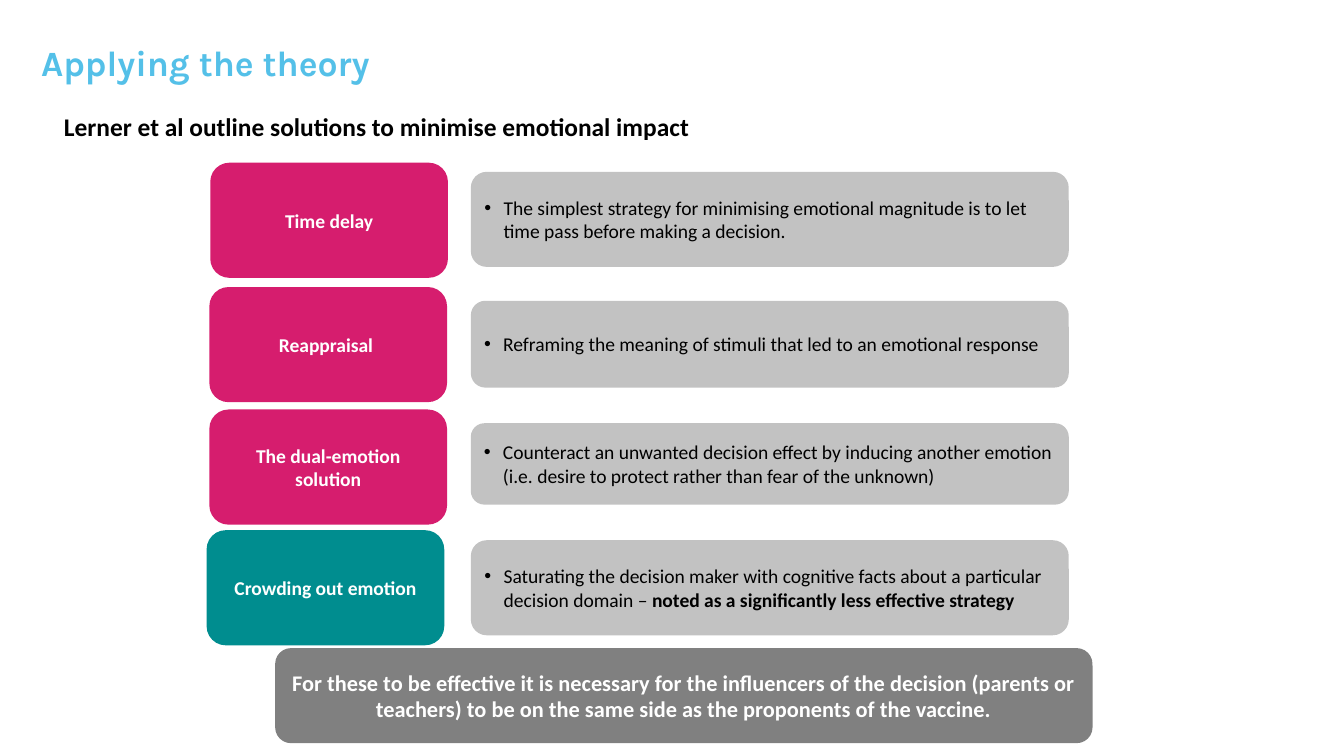
from lxml import etree
from pptx import Presentation
from pptx import util as u
from pptx.dml.color import RGBColor
from pptx.enum import shapes, text
from pptx.oxml.ns import qn

TITLE = "Applying the theory"
SUBTITLE = "Lerner et al outline solutions to minimise emotional impact"
PINK, TEAL, SILVER, GREY = "D61D6E", "008D8F", "C2C2C2", "808080"
BLACK, WHITE, SKY = "000000", "FFFFFF", "54C0E8"
STRATEGIES = [
    ("Time delay", PINK, (230, 178), (188, 104),
     ["The simplest strategy for minimising emotional magnitude is to let time pass before making a decision."]),
    ("Reappraisal ", PINK, (229, 314), (329, 95),
     ["Reframing the meaning of stimuli that led to an emotional response"]),
    ("The dual-emotion solution", PINK, (229, 448), (463, 89),
     ["Counteract an unwanted decision effect by inducing another emotion "
      "(i.e. desire to protect rather than fear of the unknown)"]),
    ("Crowding out emotion", TEAL, (226, 580), (591, 104),
     ["Saturating the decision maker with cognitive facts about a particular decision domain – ",
      "noted as a significantly less effective strategy"]),
]
CONCLUSION = ("For these to be effective it is necessary for the influencers of the decision "
              "(parents or teachers) to be on the same side as the proponents of the vaccine.")
LABEL_SIZE = (260, 126)
PANEL_LEFT, PANEL_WIDTH = 515, 654
BULLET_INDENT = 21


def px(value):
    return u.Emu(value * 9144)


def colour(value):
    return RGBColor.from_string(value)


def write(box, runs, size, ink, font="Calibri", bold=False, last_bold=False,
          align=text.PP_ALIGN.LEFT, anchor=text.MSO_ANCHOR.MIDDLE, side=10, bullet=False):
    frame = box.text_frame
    frame.word_wrap = True
    frame.auto_size = text.MSO_AUTO_SIZE.NONE
    frame.vertical_anchor = anchor
    frame.margin_left = frame.margin_right = px(side)
    frame.margin_top = frame.margin_bottom = px(5)
    para = frame.paragraphs[0]
    para.alignment = align
    if bullet:
        properties = para._p.get_or_add_pPr()
        properties.set("marL", str(px(BULLET_INDENT)))
        properties.set("indent", str(-px(BULLET_INDENT)))
        etree.SubElement(properties, qn("a:buFont"), typeface="Arial")
        etree.SubElement(properties, qn("a:buChar"), char="•")
    for index, content in enumerate(runs):
        span = para.add_run()
        span.text = content
        span.font.name = font
        span.font.size = u.Pt(size)
        span.font.bold = bold or (last_bold and index == len(runs) - 1)
        span.font.color.rgb = colour(ink)


def add_card(page, left, top, width, height, fill, runs, size, ink, **style):
    card = page.shapes.add_shape(shapes.MSO_SHAPE.ROUNDED_RECTANGLE,
                                 px(left), px(top), px(width), px(height))
    card.shadow.inherit = False
    card.fill.solid()
    card.fill.fore_color.rgb = colour(fill)
    card.line.fill.background()
    write(card, runs, size, ink, **style)


def main():
    deck = Presentation()
    deck.slide_width, deck.slide_height = px(1470), px(827)
    page = deck.slides.add_slide(deck.slide_layouts[5])

    title = page.shapes.title
    title.left, title.top, title.width, title.height = px(34), px(-1), px(1048), px(138)
    write(title, [TITLE], 28, SKY, font="Karla", bold=True, side=11)

    subtitle = page.shapes.add_textbox(px(60), px(117), px(782), px(44))
    write(subtitle, [SUBTITLE], 20, BLACK, bold=True, anchor=text.MSO_ANCHOR.TOP)
    subtitle.text_frame.auto_size = text.MSO_AUTO_SIZE.SHAPE_TO_FIT_TEXT

    for name, fill, label_corner, (panel_top, panel_height), runs in STRATEGIES:
        add_card(page, *label_corner, *LABEL_SIZE, fill, [name], 15.4, WHITE,
                 bold=True, align=text.PP_ALIGN.CENTER)
        add_card(page, PANEL_LEFT, panel_top, PANEL_WIDTH, panel_height, SILVER, runs,
                 15.4, BLACK, bullet=True, last_bold=len(runs) > 1)

    add_card(page, 301, 709, 894, 104, GREY, [CONCLUSION], 17.6, WHITE,
             bold=True, align=text.PP_ALIGN.CENTER)
    deck.save("out.pptx")


if __name__ == "__main__":
    main()
